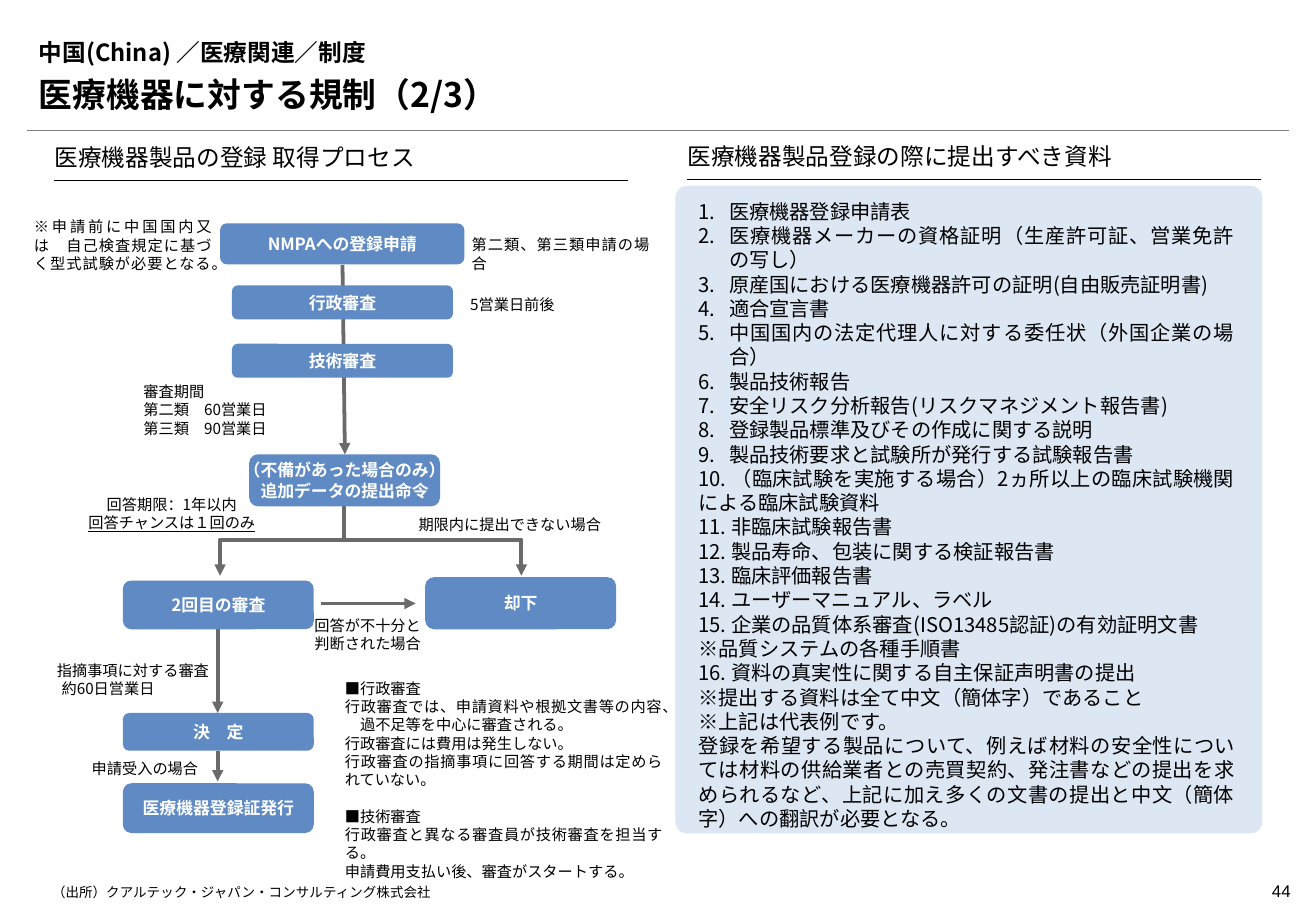
from pptx import Presentation
from pptx.dml.color import RGBColor
from pptx.enum.shapes import MSO_CONNECTOR as CONN, MSO_SHAPE as SHAPE
from pptx.enum.text import MSO_ANCHOR as ANCHOR, PP_ALIGN as ALIGN
from pptx.oxml.ns import qn
from pptx.util import Cm, Pt
from lxml.etree import SubElement

FONT = "Noto Sans CJK JP"
BLACK = RGBColor(0, 0, 0)
WHITE = RGBColor(255, 255, 255)
BLUE = RGBColor(0x5F, 0x8A, 0xC3)
PALE = RGBColor(0xDD, 0xE6, 0xF3)
GRAY = RGBColor(0x6A, 0x6A, 0x6A)
RULE = RGBColor(0x7F, 0x7F, 0x7F)

# Content; places are (left, top, width, height) in cm
TITLE = "中国(China) ／医療関連／制度"
SUBTITLE = "医療機器に対する規制（2/3）"
HEADINGS = [
    ("医療機器製品の登録 取得プロセス", (1.14, 3.02, 11.99, 0.76)),
    ("医療機器製品登録の際に提出すべき資料", (14.37, 2.97, 11.99, 0.79)),
]
STEPS = [
    (["NMPAへの登録申請"], (4.6, 4.67, 5.11, 0.86)),
    (["行政審査"], (4.85, 5.97, 4.62, 0.71)),
    (["技術審査"], (4.85, 7.19, 4.62, 0.71)),
    (["（不備があった場合のみ）", "追加データの提出命令"], (5.21, 9.5, 3.99, 1.09)),
    (["2回目の審査"], (2.57, 12.14, 3.99, 1.02)),
    (["却下"], (8.89, 12.07, 3.99, 1.09)),
    (["決　定"], (2.57, 14.91, 3.99, 0.79)),
    (["医療機器登録証発行"], (2.57, 16.38, 3.99, 1.04)),
]
ARROWS = [
    (7.16, 5.54, 7.21, 9.5),
    (4.55, 13.16, 4.55, 14.91),
    (4.55, 15.7, 4.55, 16.34),
    (6.71, 12.62, 8.69, 12.62),
]
BRANCHES = [(7.19, 10.53, 4.6, 12.04), (7.19, 10.53, 10.9, 12.04)]
NOTES = [
    (["※申請前に中国国内又は　自己検査規定に基づく型式試験が必要となる。"],
     (0.71, 4.45, 3.71, 1.19), ALIGN.JUSTIFY),
    (["第二類、第三類申請の場合"], (9.86, 4.83, 3.71, 0.81), ALIGN.JUSTIFY),
    (["5営業日前後"], (9.83, 6.07, 2.95, 0.81), ALIGN.JUSTIFY),
    (["審査期間", "第二類　60営業日", "第三類　90営業日"],
     (3, 7.9, 3.78, 1.27), ALIGN.JUSTIFY),
    (["回答期限：1年以内", "回答チャンスは１回のみ"], (1.7, 10.26, 3.78, 1.14), ALIGN.CENTER),
    (["期限内に提出できない場合"], (8.43, 10.67, 4.45, 0.89), ALIGN.CENTER),
    (["回答が不十分と", "判断された場合"], (5.46, 12.78, 4.45, 0.89), ALIGN.CENTER),
    (["指摘事項に対する審査", "約60日営業日"], (1.19, 13.72, 3.25, 1.4), ALIGN.JUSTIFY),
    (["申請受入の場合"], (1.14, 15.77, 3, 0.61), ALIGN.RIGHT),
    (["■行政審査",
      "行政審査では、申請資料や根拠文書等の内容、　過不足等を中心に審査される。",
      "行政審査には費用は発生しない。",
      "行政審査の指摘事項に回答する期間は定められていない。",
      "■技術審査",
      "行政審査と異なる審査員が技術審査を担当する。",
      "申請費用支払い後、審査がスタートする。"],
     (7.21, 14.1, 6.63, 3.86), ALIGN.JUSTIFY),
]
UNDERLINED = "回答チャンスは１回のみ"
INDENTED = "約60日営業日"
SPACED = "■技術審査"
NUMBERED = [
    "医療機器登録申請表",
    "医療機器メーカーの資格証明（生産許可証、営業免許の写し）",
    "原産国における医療機器許可の証明(自由販売証明書)",
    "適合宣言書",
    "中国国内の法定代理人に対する委任状（外国企業の場合）",
    "製品技術報告",
    "安全リスク分析報告(リスクマネジメント報告書)",
    "登録製品標準及びその作成に関する説明",
    "製品技術要求と試験所が発行する試験報告書",
]
PLAIN = [
    "10. （臨床試験を実施する場合）2ヵ所以上の臨床試験機関による臨床試験資料",
    "11. 非臨床試験報告書",
    "12. 製品寿命、包装に関する検証報告書",
    "13. 臨床評価報告書",
    "14. ユーザーマニュアル、ラベル",
    "15. 企業の品質体系審査(ISO13485認証)の有効証明文書",
    "※品質システムの各種手順書",
    "16. 資料の真実性に関する自主保証声明書の提出",
    "※提出する資料は全て中文（簡体字）であること",
    "※上記は代表例です。",
    "登録を希望する製品について、例えば材料の安全性については材料の供給業者との売買契約、"
    "発注書などの提出を求められるなど、上記に加え多くの文書の提出と中文（簡体字）への翻訳が必要となる。",
]
SOURCE = "（出所）クアルテック・ジャパン・コンサルティング株式会社"

prs = Presentation()
prs.slide_width, prs.slide_height = Cm(27.51), Cm(19.05)
slide = prs.slides.add_slide(prs.slide_layouts[5])
shapes = slide.shapes


def write(sp, lines, size, color=BLACK, bold=False, align=ALIGN.LEFT,
          anchor=ANCHOR.TOP, ins=(0, 0.1, 0, 0.1), wrap=True, font=FONT):
    tf = sp.text_frame
    tf.word_wrap, tf.vertical_anchor = wrap, anchor
    tf.margin_left, tf.margin_top, tf.margin_right, tf.margin_bottom = map(Cm, ins)
    tf.text = "\n".join(lines)
    for p in tf.paragraphs:
        p.alignment = align
        for r in p.runs:
            f = r.font
            f.size, f.bold, f.name = Pt(size), bold, font
            f.color.rgb = color
            SubElement(r._r.get_or_add_rPr(), qn("a:ea")).set("typeface", font)
    return tf.paragraphs


def text(lines, place, size, **style):
    return write(shapes.add_textbox(*map(Cm, place)), lines, size, **style)


def panel(place, fill, radius):
    sp = shapes.add_shape(SHAPE.ROUNDED_RECTANGLE, *map(Cm, place))
    sp.adjustments[0] = radius
    sp.shadow.inherit = False
    sp.fill.solid()
    sp.fill.fore_color.rgb = fill
    sp.line.fill.background()
    return sp


def line(ends, color, width, arrow=False, kind=CONN.STRAIGHT):
    c = shapes.add_connector(kind, *map(Cm, ends))
    c.line.color.rgb, c.line.width = color, Pt(width)
    if arrow:
        SubElement(c.line._get_or_add_ln(), qn("a:tailEnd")).set("type", "triangle")
    SubElement(c._element.spPr, qn("a:effectLst"))
    return c


def branch(x1, y1, x2, y2):
    """Elbow arrow that leaves downwards: a turned connector."""
    w, h = y2 - y1, abs(x2 - x1)
    left, top = (x1 + x2 - w) / 2, (y1 + y2 - h) / 2
    c = line((left, top, left + w, top + h), GRAY, 2.25, True, CONN.ELBOW)
    xfrm = c._element.spPr.find(qn("a:xfrm"))
    xfrm.set("rot", str((90 if x2 < x1 else 270) * 60000))
    if x2 > x1:
        xfrm.set("flipH", "1")


# Title, subtitle and rule
title = shapes.title
title.left, title.top, title.width, title.height = map(Cm, (0.56, 0.53, 26.39, 0.99))
head = dict(bold=True, anchor=ANCHOR.BOTTOM, ins=(0.25, 0.13, 0.25, 0.13))
write(title, [TITLE], 14, **head)
text([SUBTITLE], (0.56, 1.52, 26.39, 0.99), 20, **head)
line((0.56, 2.72, 26.95, 2.72), RULE, 0.25)

# Column headings
for heading, place in HEADINGS:
    x, y, w, h = place
    text([heading], place, 14, anchor=ANCHOR.BOTTOM, ins=(0, 0.13, 0, 0.2))
    line((x, y + h, x + w, y + h), BLACK, 0.75)

# Process flow
for ends in ARROWS:
    line(ends, GRAY, 2.25, True)
for ends in BRANCHES:
    branch(*ends)
for lines, place in STEPS:
    write(panel(place, BLUE, 0.17), lines, 10, color=WHITE, bold=True,
          align=ALIGN.CENTER, anchor=ANCHOR.MIDDLE, wrap=False)
for lines, place, align in NOTES:
    for p in text(lines, place, 9, align=align):
        if p.text == UNDERLINED:
            p.runs[0].font.underline = True
        elif p.text == INDENTED:
            p._p.get_or_add_pPr().set("marL", str(Cm(0.1)))
        elif p.text == SPACED:
            p.space_before = Pt(11)

# Documents to submit
documents = write(panel((14.12, 3.89, 12.27, 13.54), PALE, 0.02), NUMBERED + PLAIN, 12,
                  align=ALIGN.JUSTIFY, ins=(0.41, 0.2, 0.51, 0.13))
for p in documents[:len(NUMBERED)]:
    pPr = p._p.get_or_add_pPr()
    pPr.set("marL", str(Cm(0.64)))
    pPr.set("indent", str(-Cm(0.64)))
    SubElement(pPr, qn("a:buFont")).set("typeface", FONT)
    SubElement(pPr, qn("a:buAutoNum")).set("type", "arabicPeriod")

# Source and page number
text([SOURCE], (1.09, 18.49, 24, 0.41), 8, ins=(0, 0, 0, 0))
text(["44"], (24.97, 18.29, 2.01, 0.69), 10, align=ALIGN.RIGHT,
     ins=(0, 0.13, 0, 0.13), font="Arial")

prs.save("out.pptx")
